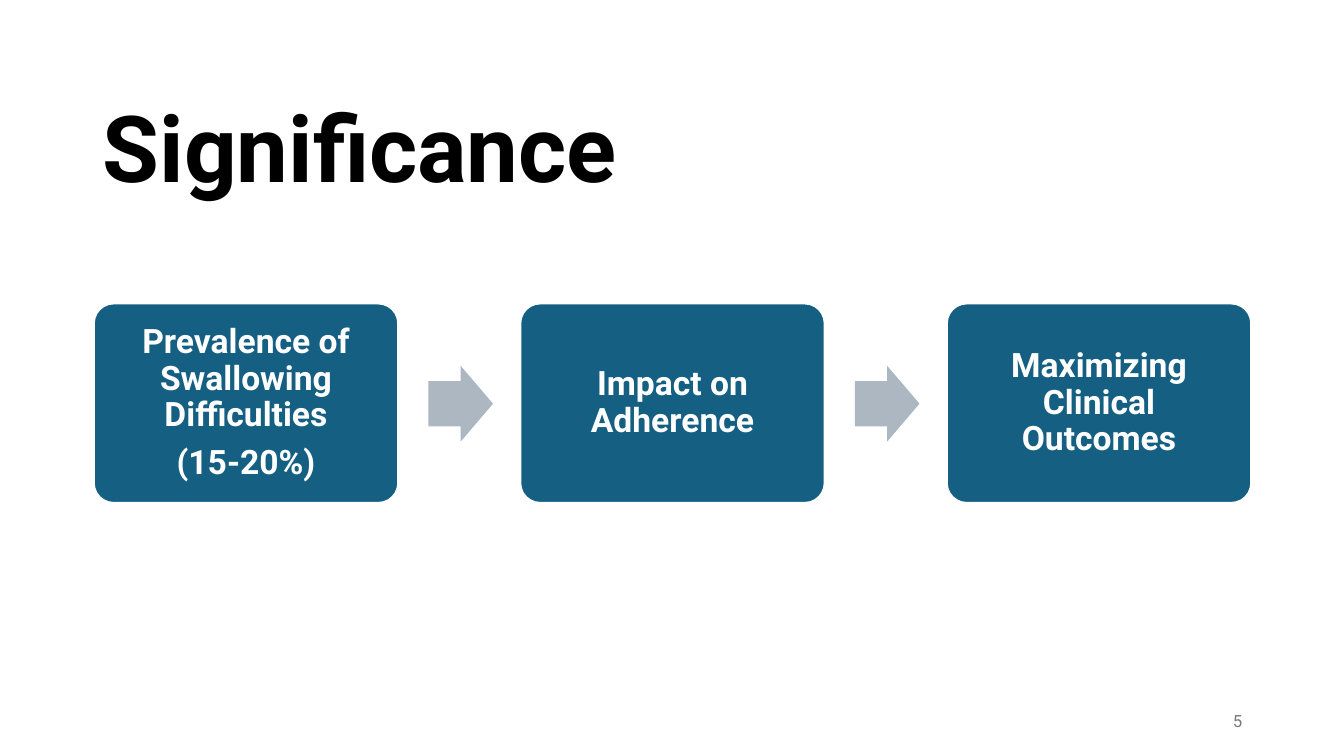
from dataclasses import dataclass

from pptx import Presentation
from pptx.dml.color import RGBColor
from pptx.enum import shapes, text
from pptx.util import Inches, Pt


@dataclass(frozen=True)
class Theme:
    font: str = "Roboto"
    title_color: RGBColor = RGBColor(0, 0, 0)
    step_fill: RGBColor = RGBColor(0x15, 0x60, 0x82)
    white: RGBColor = RGBColor(0xFF, 0xFF, 0xFF)
    arrow_fill: RGBColor = RGBColor(0xAC, 0xB7, 0xC1)
    number_color: RGBColor = RGBColor(0x79, 0x79, 0x79)
    title_size: Pt = Pt(66)
    step_size: Pt = Pt(24)
    number_size: Pt = Pt(12)


THEME = Theme()
STEPS = [
    ["Prevalence of Swallowing Difficulties", "(15-20%)"],
    ["Impact on Adherence"],
    ["Maximizing Clinical Outcomes"],
]
STEP_LEFT, STEP_TOP, STEP_WIDTH, STEP_HEIGHT = 0.93, 3.01, 3.02, 1.98
STEP_PITCH = 4.23
ARROW_OFFSET, ARROW_TOP, ARROW_WIDTH, ARROW_HEIGHT = 3.32, 3.63, 0.64, 0.75


def style_para(para, size, color, align, bold=False):
    para.alignment = align
    para.font.name = THEME.font
    para.font.size = size
    para.font.bold = bold
    para.font.color.rgb = color


def place_title(page, wording):
    title = page.shapes.title
    title.left, title.top = Inches(0.92), Inches(0.79)
    title.width, title.height = Inches(11.5), Inches(1.45)
    frame = title.text_frame
    frame.text = wording
    frame.word_wrap = True
    frame.vertical_anchor = text.MSO_ANCHOR.MIDDLE
    para = frame.paragraphs[0]
    para.line_spacing = 0.9
    style_para(para, THEME.title_size, THEME.title_color, text.PP_ALIGN.LEFT, bold=True)


def add_step(page, left, lines):
    box = page.shapes.add_shape(
        shapes.MSO_SHAPE.ROUNDED_RECTANGLE,
        Inches(left), Inches(STEP_TOP), Inches(STEP_WIDTH), Inches(STEP_HEIGHT),
    )
    box.adjustments[0] = 0.1
    box.shadow.inherit = False
    box.fill.solid()
    box.fill.fore_color.rgb = THEME.step_fill
    box.line.color.rgb = THEME.white
    box.line.width = Pt(1.5)
    frame = box.text_frame
    frame.word_wrap = True
    frame.vertical_anchor = text.MSO_ANCHOR.MIDDLE
    frame.margin_left = frame.margin_right = Inches(0.15)
    frame.margin_top = frame.margin_bottom = Inches(0.15)
    frame.text = "\n".join(lines)
    for para in frame.paragraphs:
        para.line_spacing = 0.9
        style_para(para, THEME.step_size, THEME.white, text.PP_ALIGN.CENTER, bold=True)
    for para in frame.paragraphs[:-1]:
        para.space_after = Pt(8.4)


def add_arrow(page, left):
    arrow = page.shapes.add_shape(
        shapes.MSO_SHAPE.RIGHT_ARROW,
        Inches(left), Inches(ARROW_TOP), Inches(ARROW_WIDTH), Inches(ARROW_HEIGHT),
    )
    arrow.adjustments[0] = 0.6
    arrow.adjustments[1] = 0.5
    arrow.shadow.inherit = False
    arrow.fill.solid()
    arrow.fill.fore_color.rgb = THEME.arrow_fill
    arrow.line.fill.background()


def add_page_number(page, number):
    box = page.shapes.add_textbox(Inches(9.42), Inches(6.95), Inches(3), Inches(0.4))
    frame = box.text_frame
    frame.word_wrap = True
    frame.vertical_anchor = text.MSO_ANCHOR.MIDDLE
    frame.text = str(number)
    style_para(frame.paragraphs[0], THEME.number_size, THEME.number_color, text.PP_ALIGN.RIGHT)


def main():
    deck = Presentation()
    deck.slide_width, deck.slide_height = Inches(13.33), Inches(7.5)
    page = deck.slides.add_slide(deck.slide_layouts.get_by_name("Title Only"))
    place_title(page, "Significance")
    for index, lines in enumerate(STEPS):
        left = STEP_LEFT + index * STEP_PITCH
        add_step(page, left, lines)
        if index < len(STEPS) - 1:
            add_arrow(page, left + ARROW_OFFSET)
    add_page_number(page, 5)
    deck.save("out.pptx")


if __name__ == "__main__":
    main()
